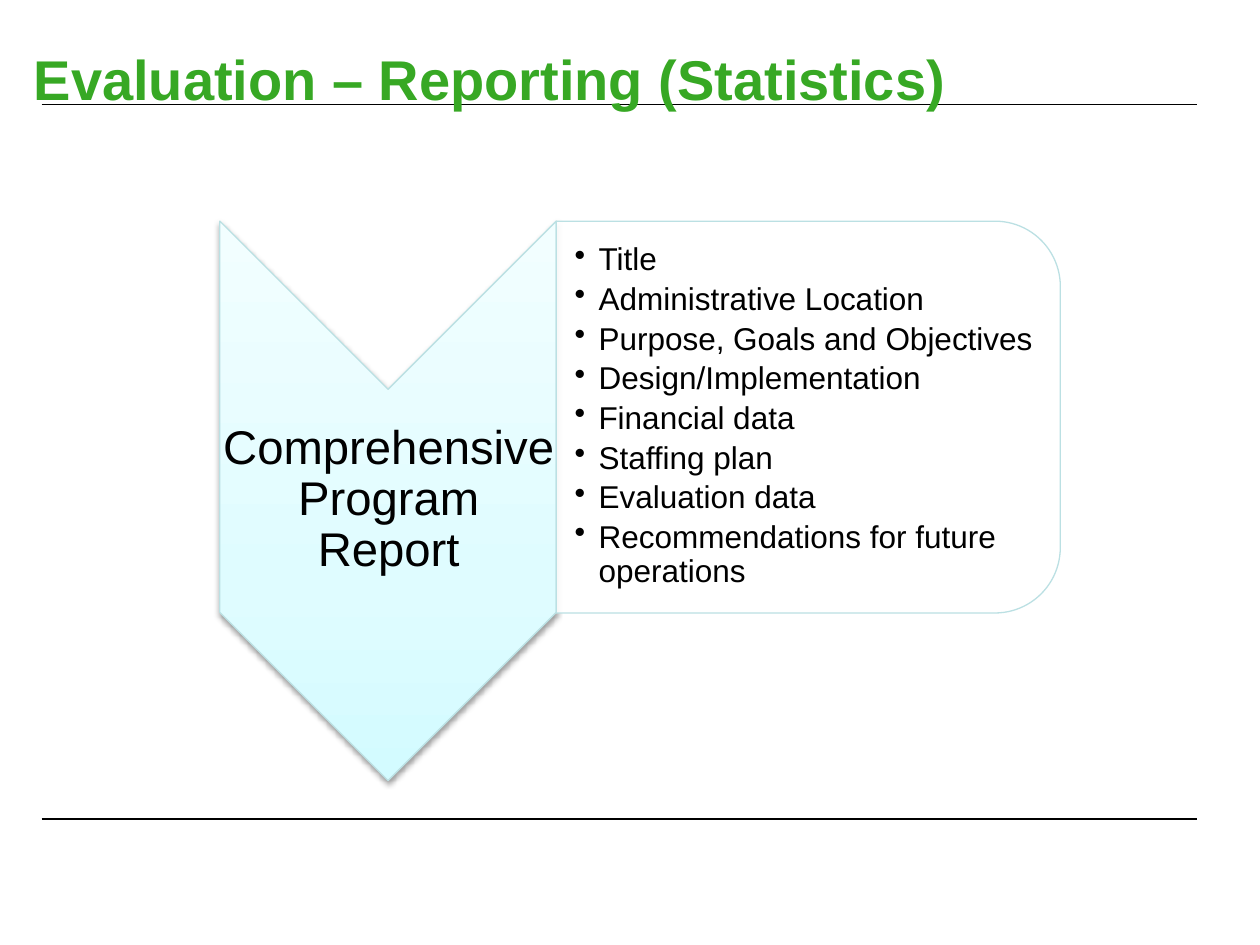
from lxml import etree
from pptx import Presentation, util as u
from pptx.dml.color import RGBColor
from pptx.enum import shapes, text
from pptx.oxml import parse_xml
from pptx.oxml.ns import nsdecls, qn

HUES = {"ink": "000000", "title": "37A824", "edge": "BBE0E3", "paper": "FFFFFF",
        "deep": "D3FBFF", "mid": "DFFCFF", "pale": "F2FEFF"}
ITEMS = ["Title", "Administrative Location", "Purpose, Goals and Objectives",
         "Design/Implementation", "Financial data", "Staffing plan",
         "Evaluation data", "Recommendations for future operations"]

deck = Presentation()
deck.slide_width, deck.slide_height = u.Inches(10), u.Inches(7.5)
slide = deck.slides.add_slide(deck.slide_layouts[6])


def add_text(box, lines, size, hue, anchor, pads):
    frame = slide.shapes.add_textbox(*map(u.Inches, box)).text_frame
    frame.word_wrap = True
    frame.vertical_anchor = anchor
    (frame.margin_left, frame.margin_top,
     frame.margin_right, frame.margin_bottom) = map(u.Inches, pads)
    frame.text = "\n".join(lines)
    for para in frame.paragraphs:
        para.font.name = "Arial"
        para.font.size = u.Pt(size)
        para.font.color.rgb = RGBColor.from_string(HUES[hue])
    return frame.paragraphs


def add_block(kind, box):
    block = slide.shapes.add_shape(kind, *map(u.Inches, box))
    block.rotation = 90
    block.shadow.inherit = False
    block.fill.solid()
    block.fill.fore_color.rgb = RGBColor.from_string(HUES["paper"])
    block.line.color.rgb = RGBColor.from_string(HUES["edge"])
    block.line.width = u.Pt(0.75)
    return block


for y in (6.5, 0.83):
    rule = slide.shapes.add_connector(shapes.MSO_CONNECTOR.STRAIGHT, u.Inches(0.33),
                                      u.Inches(y), u.Inches(9.5), u.Inches(y))
    rule.line.color.rgb = RGBColor.from_string(HUES["ink"])
    rule.line.width = u.Pt(0.75)
    etree.SubElement(rule._element.spPr, qn("a:effectLst"))

head = add_text((0.17, 0.33, 9.83, 1), ["Evaluation – Reporting (Statistics)"], 32,
                "title", text.MSO_ANCHOR.TOP, (0.1, 0.02, 0.1, 0.05))
head[0].font.bold = True

arrow = add_block(shapes.MSO_SHAPE.CHEVRON, (0.86, 2.64, 4.44, 2.67))
props = arrow._element.spPr
stops = "".join(f'<a:gs pos="{pos * 1000}"><a:srgbClr val="{HUES[hue]}"/></a:gs>'
                for pos, hue in ((0, "deep"), (35, "mid"), (100, "pale")))
props.replace(props.find(qn("a:solidFill")), parse_xml(
    f'<a:gradFill {nsdecls("a")} rotWithShape="0"><a:gsLst>{stops}</a:gsLst>'
    '<a:lin ang="16200000" scaled="0"/></a:gradFill>'))
props.find(qn("a:effectLst")).append(parse_xml(
    f'<a:outerShdw {nsdecls("a")} blurRad="{u.Pt(3.1)}" dist="{u.Pt(1.6)}" dir="5400000" '
    f'rotWithShape="0"><a:srgbClr val="{HUES["ink"]}"><a:alpha val="38000"/></a:srgbClr>'
    '</a:outerShdw>'))

label = add_text((1.75, 3.08, 2.67, 1.78), ["Comprehensive Program Report"], 27,
                 "ink", text.MSO_ANCHOR.MIDDLE, (0.02,) * 4)
label[0].alignment = text.PP_ALIGN.CENTER
label[0].line_spacing = 0.9

panel = add_block(shapes.MSO_SHAPE.ROUND_2_SAME_RECTANGLE, (4.86, 1.31, 3.11, 4))
tint = panel._element.spPr.find(qn("a:solidFill"))[0]
etree.SubElement(tint, qn("a:alpha"), val="90000")

points = add_text((4.42, 1.9, 3.85, 2.81), ITEMS, 18, "ink",
                  text.MSO_ANCHOR.MIDDLE, (0.14, 0.01, 0.01, 0.01))
for para in points:
    para.line_spacing = 0.9
    para.space_after = u.Pt(3.2)
    form = para._p.get_or_add_pPr()
    form.set("marL", str(u.Inches(0.19)))
    form.set("indent", str(u.Inches(-0.19)))
    dot = parse_xml(f'<a:buChar {nsdecls("a")} char="•"/>')
    form.find(qn("a:defRPr")).addprevious(dot)

deck.save("out.pptx")
